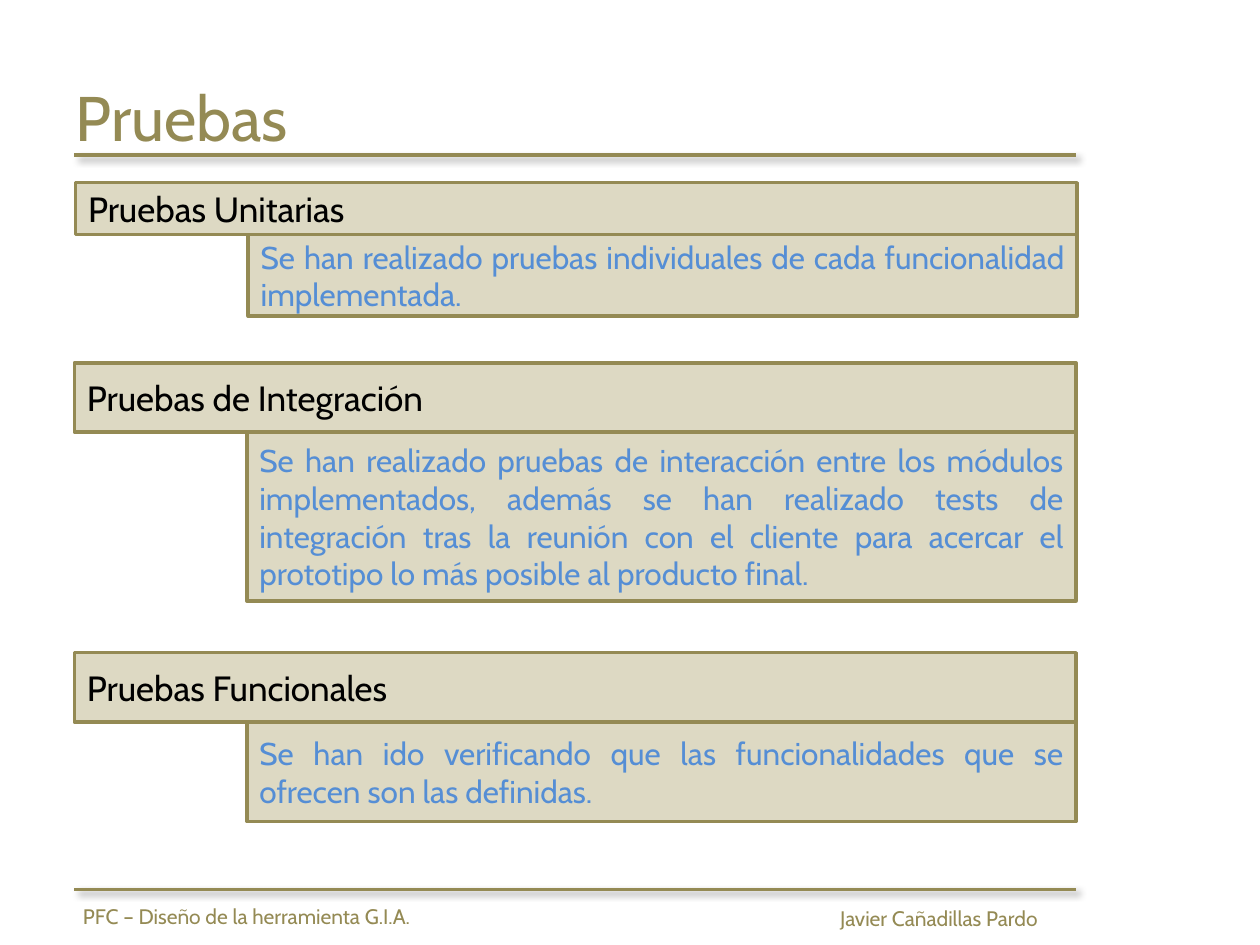
from lxml import etree
from pptx import Presentation
from pptx import util as u
from pptx.dml.color import RGBColor
from pptx.enum import shapes, text
from pptx.oxml import ns

FONT = "Cabin"
COLORS = {
    "olive": "948A54",
    "sand": "DDD9C3",
    "heading": "000000",
    "detail": "558ED5",
    "shadow": "000000",
}
LEFT = 0.59
WIDTH = 7.95
INDENT = 1.37

# left, top, heading height, detail height, heading, detail
TESTS = [
    (0.6, 1.45, 0.41, 0.65, "Pruebas Unitarias",
     "Se han realizado pruebas individuales de cada funcionalidad implementada."),
    (LEFT, 2.88, 0.55, 1.34, "Pruebas de Integración",
     "Se han realizado pruebas de interacción entre los módulos implementados, "
     "además se han realizado tests de integración tras la reunión con el cliente "
     "para acercar el prototipo lo más posible al producto final."),
    (LEFT, 5.18, 0.55, 0.79, "Pruebas Funcionales",
     "Se han ido verificando que las funcionalidades que se ofrecen son las definidas."),
]


def color(name):
    return RGBColor.from_string(COLORS[name])


def write(shape, content, size, color_name, align=text.PP_ALIGN.LEFT):
    shape.text_frame.text = content
    paragraph = shape.text_frame.paragraphs[0]
    paragraph.alignment = align
    font = paragraph.runs[0].font
    font.name = FONT
    font.size = u.Pt(size)
    font.color.rgb = color(color_name)


def add_title(slide, content):
    title = slide.shapes.title
    title.left, title.top = u.Inches(0.5), u.Inches(0.3)
    title.width, title.height = u.Inches(9), u.Inches(1.25)
    title.text_frame.vertical_anchor = text.MSO_ANCHOR.MIDDLE
    write(title, content, 36, "olive")


def add_box(slide, left, top, width, height, content, size, color_name, align):
    box = slide.shapes.add_shape(
        shapes.MSO_SHAPE.RECTANGLE,
        u.Inches(left), u.Inches(top), u.Inches(width), u.Inches(height))
    box.shadow.inherit = False
    box.fill.solid()
    box.fill.fore_color.rgb = color("sand")
    box.line.color.rgb = color("olive")
    box.line.width = u.Pt(2)
    box.text_frame.word_wrap = True
    box.text_frame.vertical_anchor = text.MSO_ANCHOR.MIDDLE
    write(box, content, size, color_name, align)


def add_test(slide, left, top, heading_height, detail_height, heading, detail):
    add_box(slide, left, top, WIDTH, heading_height,
            heading, 20, "heading", text.PP_ALIGN.LEFT)
    add_box(slide, left + INDENT, top + heading_height, WIDTH - INDENT, detail_height,
            detail, 18, "detail", text.PP_ALIGN.JUSTIFY)


def add_rule(slide, top):
    rule = slide.shapes.add_connector(
        shapes.MSO_CONNECTOR.STRAIGHT,
        u.Inches(LEFT), u.Inches(top), u.Inches(LEFT + WIDTH), u.Inches(top))
    rule.line.color.rgb = color("olive")
    rule.line.width = u.Pt(1.75)
    # Soft shadow: 4 pt blur, 3 pt away at 45 degrees, 40 % opaque
    effects = etree.SubElement(rule._element.spPr, ns.qn("a:effectLst"))
    shadow = etree.SubElement(
        effects, ns.qn("a:outerShdw"), blurRad=str(u.Pt(4)), dist=str(u.Pt(3)),
        dir=str(45 * 60000), algn="tl", rotWithShape="0")
    tint = etree.SubElement(shadow, ns.qn("a:srgbClr"), val=COLORS["shadow"])
    etree.SubElement(tint, ns.qn("a:alpha"), val="40000")


def add_footer_text(slide, left, top, width, content):
    box = slide.shapes.add_textbox(
        u.Inches(left), u.Inches(top), u.Inches(width), u.Inches(0.3))
    box.text_frame.word_wrap = False
    box.text_frame.auto_size = text.MSO_AUTO_SIZE.SHAPE_TO_FIT_TEXT
    write(box, content, 12, "olive")


def main():
    presentation = Presentation()
    presentation.slide_width = u.Inches(10)
    presentation.slide_height = u.Inches(7.5)
    slide = presentation.slides.add_slide(presentation.slide_layouts[5])

    # Title
    add_title(slide, "Pruebas")
    add_rule(slide, 1.23)

    # Kinds of test
    for test in TESTS:
        add_test(slide, *test)

    # Footer
    add_rule(slide, 7.06)
    add_footer_text(slide, 6.57, 7.14, 1.94, "Javier Cañadillas Pardo")
    add_footer_text(slide, 0.56, 7.12, 3.03, "PFC – Diseño de la herramienta G.I.A.")

    presentation.save("out.pptx")


if __name__ == "__main__":
    main()
